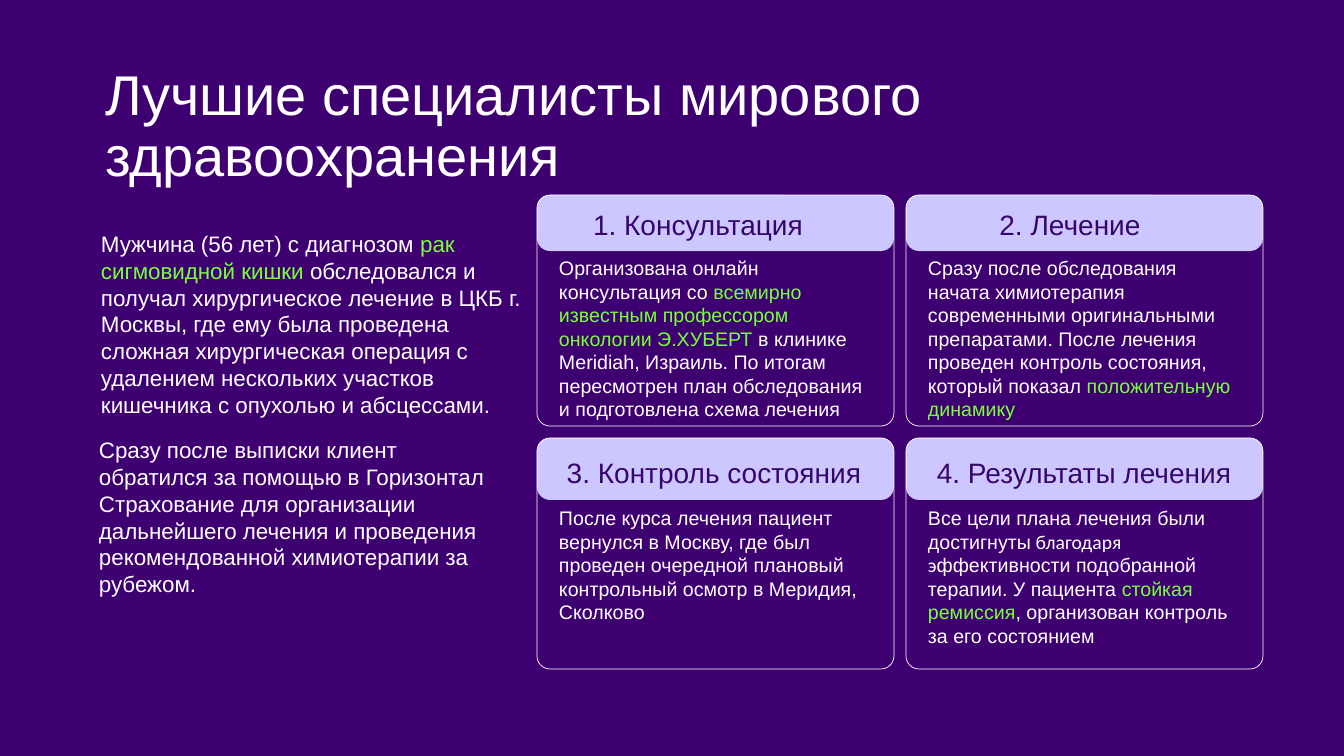
import pptx
import pptx.dml.color
import pptx.enum.shapes
import pptx.enum.text
import pptx.util

RGBColor = pptx.dml.color.RGBColor
PURPLE = RGBColor(0x3E, 0x00, 0x71)
DEEP_PURPLE = RGBColor(0x38, 0x05, 0x6C)
LILAC = RGBColor(0xCC, 0xC8, 0xFF)
GREEN = RGBColor(0x79, 0xFF, 0x3A)
WHITE = RGBColor(0xFF, 0xFF, 0xFF)

SLIDE_W, SLIDE_H = 1344, 756
EMU_PER_PX = 12192000 / SLIDE_W

CARD_W, CARD_H = 357, 231
CARD_LEFT, CARD_TOP = 537, 195
COLUMN_STEP, ROW_STEP = 369, 243
HEADER_HEIGHTS = (56, 62)
CORNER = 13
BODY_INDENT = 22

ACCENT = {"color": GREEN}
INTRO = [
    ("Мужчина (56 лет) с диагнозом ", {}),
    ("рак сигмовидной кишки", ACCENT),
    (" обследовался и получал хирургическое лечение в ЦКБ г. Москвы, где ему была "
     "проведена сложная хирургическая операция с удалением нескольких участков "
     "кишечника с опухолью и абсцессами.", {}),
]
REQUEST = [
    ("Сразу после выписки клиент обратился за помощью в Горизонтал Страхование для "
     "организации дальнейшего лечения и проведения рекомендованной химиотерапии "
     "за рубежом.", {}),
]

# heading, centre of heading, top of heading, top of body, width of body, body
STAGES = [
    ("1. Консультация", 698, 207, 256, 313, [
        ("Организована онлайн консультация со ", {}),
        ("всемирно известным профессором онкологии Э.ХУБЕРТ ", ACCENT),
        ("в клинике Meridiah, Израиль. По итогам пересмотрен план обследования "
         "и подготовлена схема лечения", {}),
    ]),
    ("2. Лечение", 1070, 207, 256, 314, [
        ("Сразу после обследования начата химиотерапия современными оригинальными "
         "препаратами. После лечения проведен контроль состояния, который показал ", {}),
        ("положительную динамику", ACCENT),
    ]),
    ("3. Контроль состояния", 714, 456, 506, 325, [
        ("После курса лечения пациент вернулся в Москву, где был проведен очередной "
         "плановый контрольный осмотр в Меридия, Сколково", {}),
    ]),
    ("4. Результаты лечения", 1084, 456, 506, 300, [
        ("Все цели плана лечения были достигнуты", {}),
        (" благодаря э", {"name": "Calibri"}),
        ("ффективности подобранной терапии. У пациента ", {}),
        ("стойкая ремиссия", ACCENT),
        (", организован контроль за его состоянием", {}),
    ]),
]


def px(*lengths):
    return [round(length * EMU_PER_PX) for length in lengths]


def add_text(slide, box, runs, size, color=WHITE, **paragraph_format):
    """Add a one-paragraph box; each run is its text and its own font values."""
    frame = slide.shapes.add_textbox(*px(*box)).text_frame
    frame_format = {"word_wrap": True, "margin_left": 0, "margin_top": 0,
                    "margin_right": 0, "margin_bottom": 0}
    for key, value in frame_format.items():
        setattr(frame, key, value)
    paragraph = frame.paragraphs[0]
    for key, value in paragraph_format.items():
        setattr(paragraph, key, value)
    for words, own_format in runs:
        run = paragraph.add_run()
        run.text = words
        font_format = {"name": "Arial", "size": pptx.util.Pt(size), "color": color}
        font_format.update(own_format)
        run.font.color.rgb = font_format.pop("color")
        for key, value in font_format.items():
            setattr(run.font, key, value)


def add_rounded(slide, left, top, width, height):
    panel = slide.shapes.add_shape(
        pptx.enum.shapes.MSO_SHAPE.ROUNDED_RECTANGLE, *px(left, top, width, height))
    panel.shadow.inherit = False
    panel.adjustments[0] = CORNER / height
    return panel


def add_stage(slide, index, heading, heading_centre, heading_top, body_top, body_width, body):
    row, column = divmod(index, 2)
    left = CARD_LEFT + column * COLUMN_STEP
    top = CARD_TOP + row * ROW_STEP

    header = add_rounded(slide, left, top, CARD_W, HEADER_HEIGHTS[row])
    header.fill.solid()
    header.fill.fore_color.rgb = LILAC
    header.line.fill.background()

    border = add_rounded(slide, left, top, CARD_W, CARD_H)
    border.fill.background()
    border.line.color.rgb = WHITE
    border.line.width = pptx.util.Pt(0.5)

    add_text(slide, (heading_centre - 160, heading_top, 320, 34), [(heading, {})], 20,
             DEEP_PURPLE, alignment=pptx.enum.text.PP_ALIGN.CENTER)
    add_text(slide, (left + BODY_INDENT, body_top, body_width, 166), body, 14)


def main():
    deck = pptx.Presentation()
    deck.slide_width, deck.slide_height = px(SLIDE_W, SLIDE_H)
    slide = deck.slides.add_slide(deck.slide_layouts[6])
    slide.background.fill.solid()
    slide.background.fill.fore_color.rgb = PURPLE

    add_text(slide, (105, 65, 840, 186),
             [("Лучшие специалисты мирового здравоохранения", {})], 40,
             line_spacing=pptx.util.Pt(44))
    add_text(slide, (101, 230, 433, 190), INTRO, 16)
    add_text(slide, (99, 436, 407, 163), REQUEST, 16)
    for index, stage in enumerate(STAGES):
        add_stage(slide, index, *stage)

    deck.save("out.pptx")


if __name__ == "__main__":
    main()
